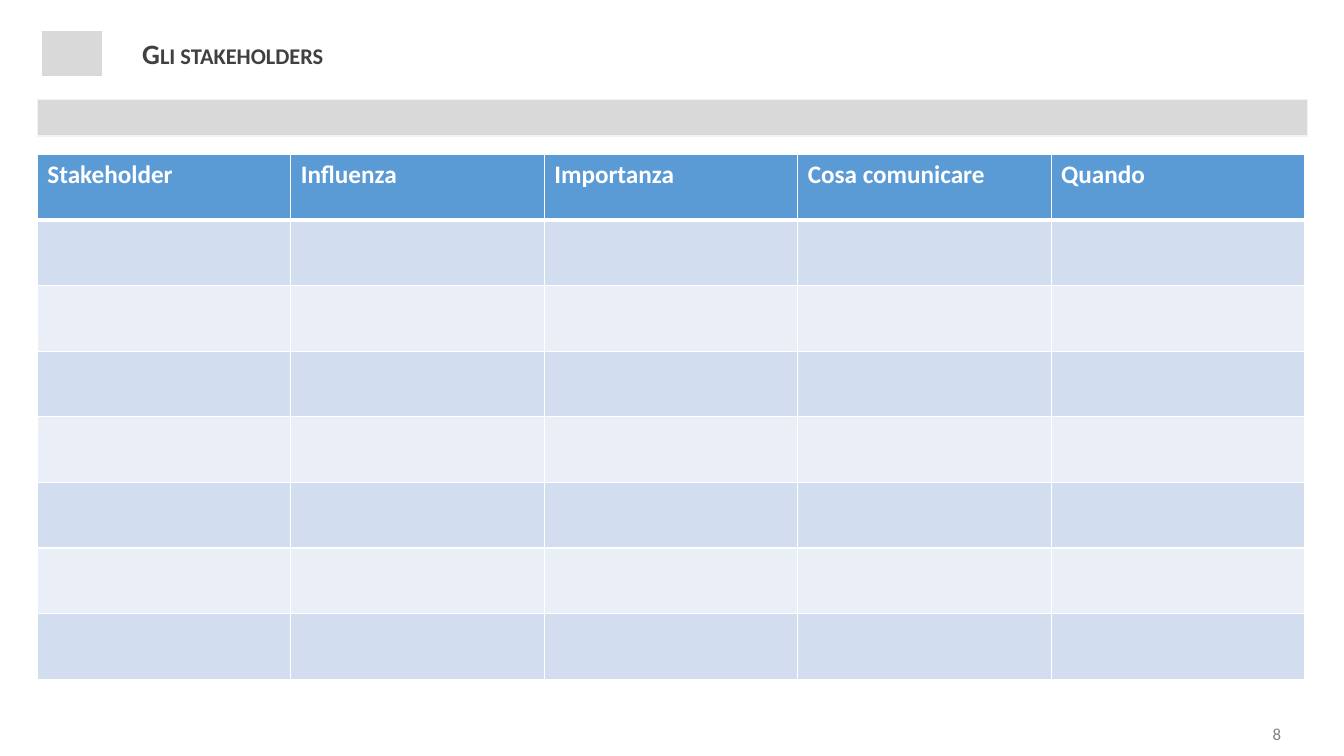
import dataclasses

import lxml.etree
import pptx
import pptx.dml.color
import pptx.enum.shapes
import pptx.enum.text
import pptx.oxml.ns
import pptx.util

Inches = pptx.util.Inches
RGBColor = pptx.dml.color.RGBColor
Align = pptx.enum.text.PP_ALIGN
qn = pptx.oxml.ns.qn

WHITE = RGBColor(0xFF, 0xFF, 0xFF)
BAND_GREY = RGBColor(0xD9, 0xD9, 0xD9)
EDGE_GREY = RGBColor(0xF2, 0xF2, 0xF2)
TITLE_GREY = RGBColor(0x40, 0x40, 0x40)
NUMBER_GREY = RGBColor(0x80, 0x80, 0x80)
HEADER_BLUE = RGBColor(0x5B, 0x9B, 0xD5)
ROW_BLUES = (RGBColor(0xEA, 0xEF, 0xF7), RGBColor(0xD2, 0xDE, 0xEF))

HEADERS = ("Stakeholder", "Influenza", "Importanza", "Cosa comunicare", "Quando")
ROW_COUNT = 8


@dataclasses.dataclass(frozen=True)
class Band:
    left: float
    top: float
    width: float
    height: float
    edge: RGBColor


@dataclasses.dataclass(frozen=True)
class Label:
    text: str
    left: float
    top: float
    width: float
    height: float
    size: int
    color: RGBColor
    margins: tuple[float, float, float, float]
    align: Align = Align.LEFT
    heading: bool = False


BANDS = (
    Band(0.42, 0.31, 0.59, 0.44, BAND_GREY),
    Band(0.37, 0.99, 12.6, 0.36, EDGE_GREY),
)
LABELS = (
    Label("Gli stakeholders", 1.35, 0.11, 11.62, 0.83, 20, TITLE_GREY,
          (0.06, 0.06, 0.1, 0.06), heading=True),
    Label("8", 12.39, 7.14, 0.55, 0.27, 12, NUMBER_GREY,
          (0.1, 0.05, 0.1, 0.05), align=Align.CENTER),
)


def style_paragraph(para, size: int, color: RGBColor, bold: bool) -> None:
    para.font.name = "Calibri"
    para.font.size = pptx.util.Pt(size)
    para.font.bold = bold
    para.font.color.rgb = color


def draw_band(page, band: Band) -> None:
    shape = page.shapes.add_shape(
        pptx.enum.shapes.MSO_SHAPE.RECTANGLE,
        Inches(band.left), Inches(band.top), Inches(band.width), Inches(band.height))
    shape.shadow.inherit = False
    shape.fill.solid()
    shape.fill.fore_color.rgb = BAND_GREY
    shape.line.color.rgb = band.edge
    shape.line.width = pptx.util.Pt(0.75)


def draw_label(page, label: Label) -> None:
    box = page.shapes.add_textbox(
        Inches(label.left), Inches(label.top), Inches(label.width), Inches(label.height))
    frame = box.text_frame
    frame.word_wrap = label.heading
    frame.vertical_anchor = pptx.enum.text.MSO_ANCHOR.MIDDLE
    (frame.margin_left, frame.margin_top,
     frame.margin_right, frame.margin_bottom) = map(Inches, label.margins)
    para = frame.paragraphs[0]
    para.text = label.text
    para.alignment = label.align
    style_paragraph(para, label.size, label.color, label.heading)
    if label.heading:
        para._p.pPr.find(qn("a:defRPr")).set("cap", "small")


def set_borders(cell, bottom: float, top: float) -> None:
    properties = cell._tc.get_or_add_tcPr()
    widths = {"a:lnL": 1, "a:lnR": 1, "a:lnT": top, "a:lnB": bottom}
    for position, (tag, width) in enumerate(widths.items()):
        border = lxml.etree.Element(qn(tag), w=str(pptx.util.Pt(width)))
        fill = lxml.etree.SubElement(border, qn("a:solidFill"))
        lxml.etree.SubElement(fill, qn("a:srgbClr"), val=str(WHITE))
        properties.insert(position, border)


def draw_table(page) -> None:
    table = page.shapes.add_table(
        ROW_COUNT, len(HEADERS),
        Inches(0.37), Inches(1.53), Inches(12.57), Inches(5.21)).table
    for row_index, row in enumerate(table.rows):
        for column_index, cell in enumerate(row.cells):
            cell.fill.solid()
            cell.fill.fore_color.rgb = ROW_BLUES[row_index % 2] if row_index else HEADER_BLUE
            set_borders(cell, bottom=1 if row_index else 3, top=3 if row_index == 1 else 1)
            if row_index == 0:
                para = cell.text_frame.paragraphs[0]
                para.text = HEADERS[column_index]
                style_paragraph(para, 18, WHITE, True)


def main() -> None:
    deck = pptx.Presentation()
    deck.slide_width = Inches(13.33)
    deck.slide_height = Inches(7.5)
    page = deck.slides.add_slide(deck.slide_layouts[6])
    for band in BANDS:
        draw_band(page, band)
    for label in LABELS:
        draw_label(page, label)
    draw_table(page)
    deck.save("out.pptx")


if __name__ == "__main__":
    main()
